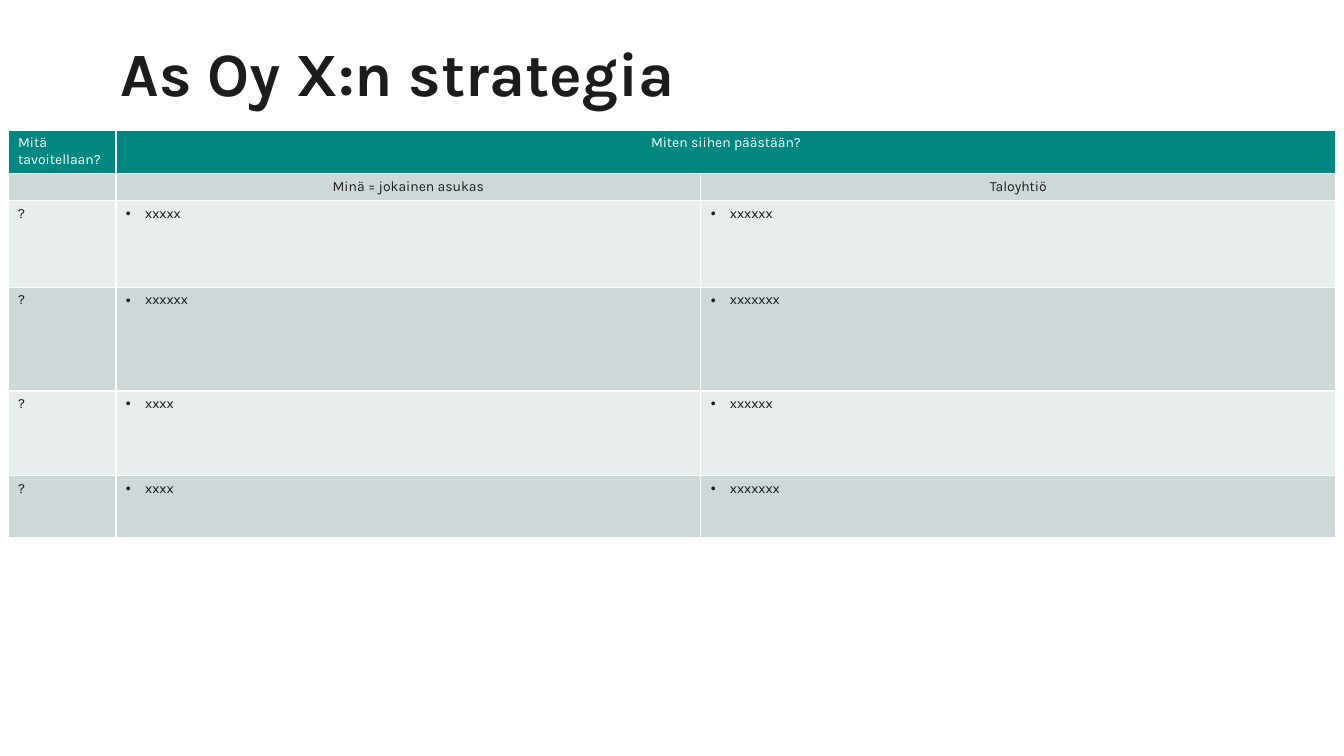
from dataclasses import dataclass

from lxml import etree
from pptx import Presentation
from pptx.dml.color import RGBColor
from pptx.enum import text
from pptx.oxml import ns
from pptx.util import Inches, Pt


@dataclass(frozen=True)
class Theme:
    font: str = "Karla"
    ink: RGBColor = RGBColor(0x1C, 0x1C, 0x1C)
    white: RGBColor = RGBColor(0xFF, 0xFF, 0xFF)
    header: RGBColor = RGBColor(0x00, 0x87, 0x82)
    dark_band: RGBColor = RGBColor(0xCC, 0xD9, 0xD8)
    light_band: RGBColor = RGBColor(0xE7, 0xED, 0xED)
    title_size: Pt = Pt(44)
    body_size: Pt = Pt(10)
    border: Pt = Pt(1)


theme = Theme()


def style_font(font, size, color, bold=False):
    font.name, font.size, font.bold = theme.font, size, bold
    font.color.rgb = color


def add_borders(cell):
    properties = cell._tc.get_or_add_tcPr()
    for index, side in enumerate(("lnL", "lnR", "lnT", "lnB")):
        line = etree.Element(ns.qn(f"a:{side}"), w=str(theme.border))
        fill = etree.SubElement(line, ns.qn("a:solidFill"))
        etree.SubElement(fill, ns.qn("a:srgbClr"), val=str(theme.white))
        properties.insert(index, line)


presentation = Presentation()
presentation.slide_width = Inches(13.33)
presentation.slide_height = Inches(7.5)
slide = presentation.slides.add_slide(presentation.slide_layouts[5])

# Title
title = slide.shapes.title
title.left, title.top = Inches(1.1), Inches(0.22)
title.width, title.height = Inches(10.29), Inches(1.07)
title.text_frame.vertical_anchor = text.MSO_ANCHOR.MIDDLE
paragraph = title.text_frame.paragraphs[0]
paragraph.text = "As Oy X:n strategia"
paragraph.alignment = text.PP_ALIGN.LEFT
paragraph.line_spacing = 0.9
style_font(paragraph.font, theme.title_size, theme.ink, bold=True)

# Strategy table: two heading rows, then goals with bulleted actions
rows = [
    ("Mitä tavoitellaan?", "Miten siihen päästään?", ""),
    ("", "Minä = jokainen asukas", "Taloyhtiö"),
    ("?", "xxxxx", "xxxxxx"),
    ("?", "xxxxxx", "xxxxxxx"),
    ("?", "xxxx", "xxxxxx"),
    ("?", "xxxx", "xxxxxxx"),
]
column_widths = [1.07, 5.8, 6.3]
row_heights = [0.43, 0.26, 0.86, 1.03, 0.84, 0.62]

table = slide.shapes.add_table(
    len(rows), len(column_widths), Inches(0.08), Inches(1.29),
    Inches(sum(column_widths)), Inches(sum(row_heights))).table
table.first_row = table.horz_banding = False
for column, width in zip(table.columns, column_widths):
    column.width = Inches(width)
for row, height in zip(table.rows, row_heights):
    row.height = Inches(height)
table.cell(0, 1).merge(table.cell(0, 2))

for row_index, row in enumerate(rows):
    if row_index == 0:
        band = theme.header
    else:
        band = theme.dark_band if row_index % 2 else theme.light_band
    for column_index, label in enumerate(row):
        cell = table.cell(row_index, column_index)
        cell.fill.solid()
        cell.fill.fore_color.rgb = band
        add_borders(cell)
        paragraph = cell.text_frame.paragraphs[0]
        if not label:
            # An empty cell takes its line height from the end mark
            etree.SubElement(paragraph._p, ns.qn("a:endParaRPr"),
                             sz=str(int(theme.body_size.pt * 100)))
            continue
        paragraph.text = label
        if column_index and row_index < 2:
            paragraph.alignment = text.PP_ALIGN.CENTER
        elif column_index:
            properties = paragraph._p.get_or_add_pPr()
            properties.set("marL", str(Inches(0.19)))
            properties.set("indent", str(Inches(-0.19)))
            etree.SubElement(properties, ns.qn("a:buFont"), typeface="Arial")
            etree.SubElement(properties, ns.qn("a:buChar"), char="•")
        style_font(paragraph.font, theme.body_size,
                   theme.ink if row_index else theme.white)

presentation.save("out.pptx")
